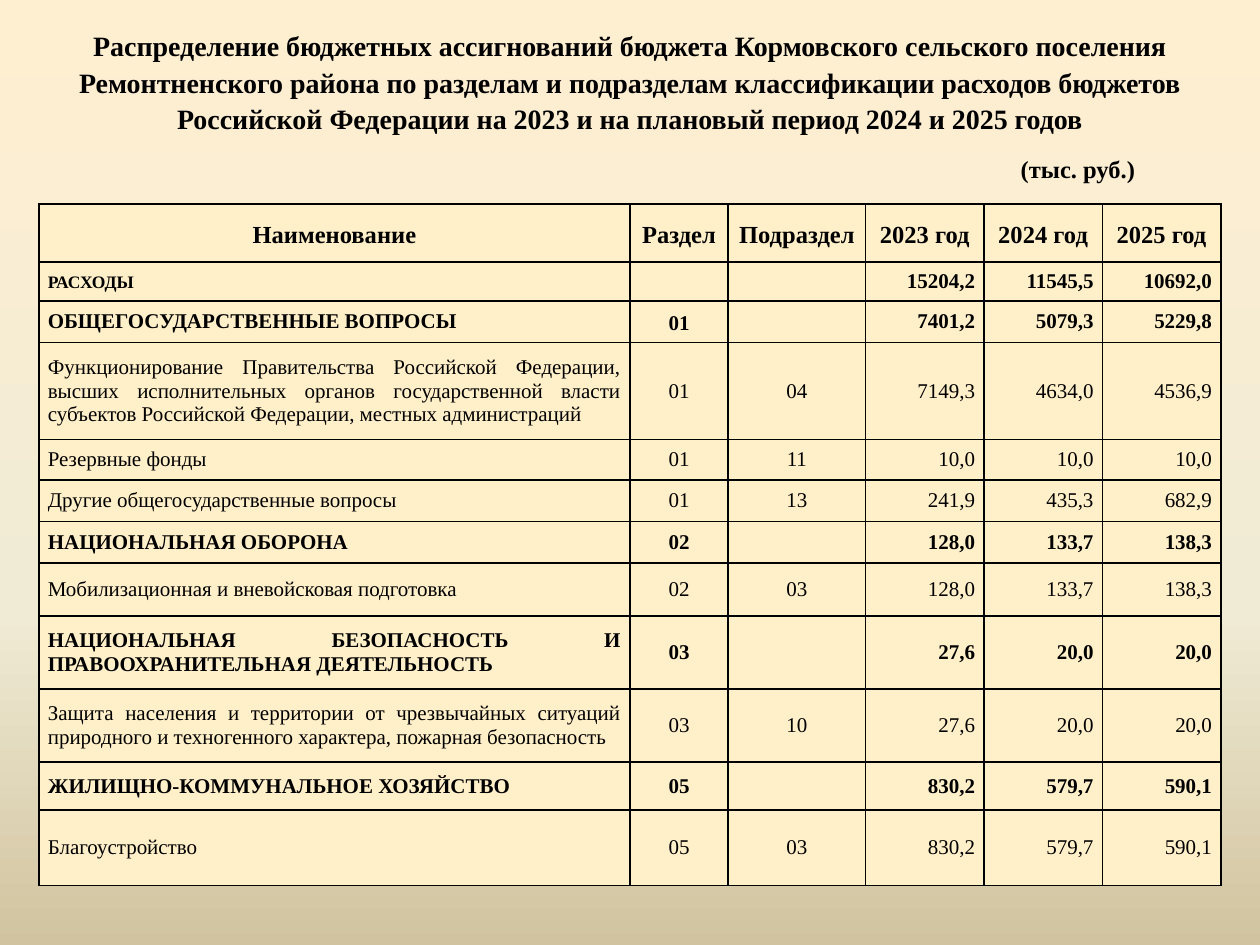
from copy import deepcopy

from pptx import Presentation
from pptx import util as u
from pptx.dml.color import RGBColor
from pptx.enum import text
from pptx.oxml import parse_xml
from pptx.oxml.ns import nsdecls, qn

BLACK = RGBColor(0x00, 0x00, 0x00)
CREAM = RGBColor(0xFF, 0xF0, 0xC9)
SKY = [(0, RGBColor(0xFF, 0xEF, 0xD1)),
       (0.65, RGBColor(0xF0, 0xEB, 0xD5)),
       (1, RGBColor(0xD1, 0xC3, 0x9F))]
FONT = "Times New Roman"
AL = text.PP_ALIGN

TITLE = ("Распределение бюджетных ассигнований бюджета Кормовского сельского "
         "поселения Ремонтненского района по разделам и подразделам "
         "классификации расходов бюджетов Российской Федерации на 2023 и на "
         "плановый период 2024 и 2025 годов")
COLS = [4.69, 0.78, 1.09, 0.94, 0.94, 0.94]
# row height, bold, cells
ROWS = [
    (0.46, True, ["Наименование", "Раздел", "Подраздел",
                  "2023 год", "2024 год", "2025 год"]),
    (0.31, True, ["РАСХОДЫ", "", "", "15204,2", "11545,5", "10692,0"]),
    (0.33, True, ["ОБЩЕГОСУДАРСТВЕННЫЕ ВОПРОСЫ", "01", "",
                  "7401,2", "5079,3", "5229,8"]),
    (0.77, False, ["Функционирование Правительства Российской Федерации, "
                   "высших исполнительных органов государственной власти "
                   "субъектов Российской Федерации, местных администраций",
                   "01", "04", "7149,3", "4634,0", "4536,9"]),
    (0.32, False, ["Резервные фонды", "01", "11", "10,0", "10,0", "10,0"]),
    (0.33, False, ["Другие общегосударственные вопросы", "01", "13",
                   "241,9", "435,3", "682,9"]),
    (0.33, True, ["НАЦИОНАЛЬНАЯ ОБОРОНА", "02", "",
                  "128,0", "133,7", "138,3"]),
    (0.42, False, ["Мобилизационная и вневойсковая подготовка", "02", "03",
                   "128,0", "133,7", "138,3"]),
    (0.58, True, ["НАЦИОНАЛЬНАЯ БЕЗОПАСНОСТЬ И ПРАВООХРАНИТЕЛЬНАЯ "
                  "ДЕЯТЕЛЬНОСТЬ", "03", "", "27,6", "20,0", "20,0"]),
    (0.58, False, ["Защита населения и территории от чрезвычайных ситуаций "
                   "природного и техногенного характера, пожарная "
                   "безопасность", "03", "10", "27,6", "20,0", "20,0"]),
    (0.38, True, ["ЖИЛИЩНО-КОММУНАЛЬНОЕ ХОЗЯЙСТВО", "05", "",
                  "830,2", "579,7", "590,1"]),
    (0.6, False, ["Благоустройство", "05", "03", "830,2", "579,7", "590,1"]),
]


def write(p, content, size, bold, align, spacing=None):
    p.alignment = align
    p.line_spacing = spacing
    r = p.add_run()
    r.text = content
    r.font.name, r.font.size, r.font.bold = FONT, u.Pt(size), bold
    r.font.color.rgb = BLACK


def add_borders(cell):
    tcPr = cell._tc.get_or_add_tcPr()
    for i, side in enumerate(("lnL", "lnR", "lnT", "lnB")):
        tcPr.insert(i, parse_xml(
            f'<a:{side} {nsdecls("a")} w="{u.Pt(1)}"><a:solidFill>'
            f'<a:srgbClr val="{BLACK}"/></a:solidFill></a:{side}>'))


prs = Presentation()
prs.slide_width, prs.slide_height = u.Inches(10), u.Inches(7.5)
s = prs.slides.add_slide(prs.slide_layouts[6])

# Background gradient, top to bottom
fill = s.background.fill
fill.gradient()
fill.gradient_angle = 270
stops = s.element.find(".//" + qn("a:gsLst"))
stops.append(deepcopy(stops[0]))
for stop, (position, colour) in zip(fill.gradient_stops, SKY):
    stop.position = position
    stop.color.rgb = colour

# Title and unit of measure
for box, content, size, spacing in [
        ((0.5, 0.13, 9, 1.02), TITLE, 16, 1.08),
        ((7.73, 1.17, 1.65, 0.34), "(тыс. руб.)", 14, None)]:
    tf = s.shapes.add_textbox(*map(u.Inches, box)).text_frame
    tf.word_wrap = True
    tf.vertical_anchor = text.MSO_ANCHOR.MIDDLE
    write(tf.paragraphs[0], content, size, True, AL.CENTER, spacing)

# Budget table
height = sum(h for h, _, _ in ROWS)
table = s.shapes.add_table(
    len(ROWS), len(COLS),
    *map(u.Inches, (0.31, 1.62, sum(COLS), height))).table
for column, width in zip(table.columns, COLS):
    column.width = u.Inches(width)

for i, (height, bold, cells) in enumerate(ROWS):
    table.rows[i].height = u.Inches(height)
    for j, content in enumerate(cells):
        cell = table.cell(i, j)
        cell.fill.solid()
        cell.fill.fore_color.rgb = CREAM
        add_borders(cell)
        cell.vertical_anchor = text.MSO_ANCHOR.MIDDLE
        cell.margin_top = cell.margin_bottom = 0
        cell.margin_left = cell.margin_right = u.Inches(0.07 if i else 0)
        p = cell.text_frame.paragraphs[0]
        if not content:
            p._p.append(parse_xml(f'<a:endParaRPr {nsdecls("a")} sz="1200"/>'))
            continue
        if i == 0 or j in (1, 2):
            align = AL.CENTER
        else:
            align = AL.JUSTIFY if j == 0 else AL.RIGHT
        size = 14 if i == 0 else 10 if (i, j) == (1, 0) else 12
        loose = i == 0 or (i, j) in ((1, 0), (2, 1))
        write(p, content, size, bold, align, 1.15 if loose else None)

prs.save("out.pptx")
